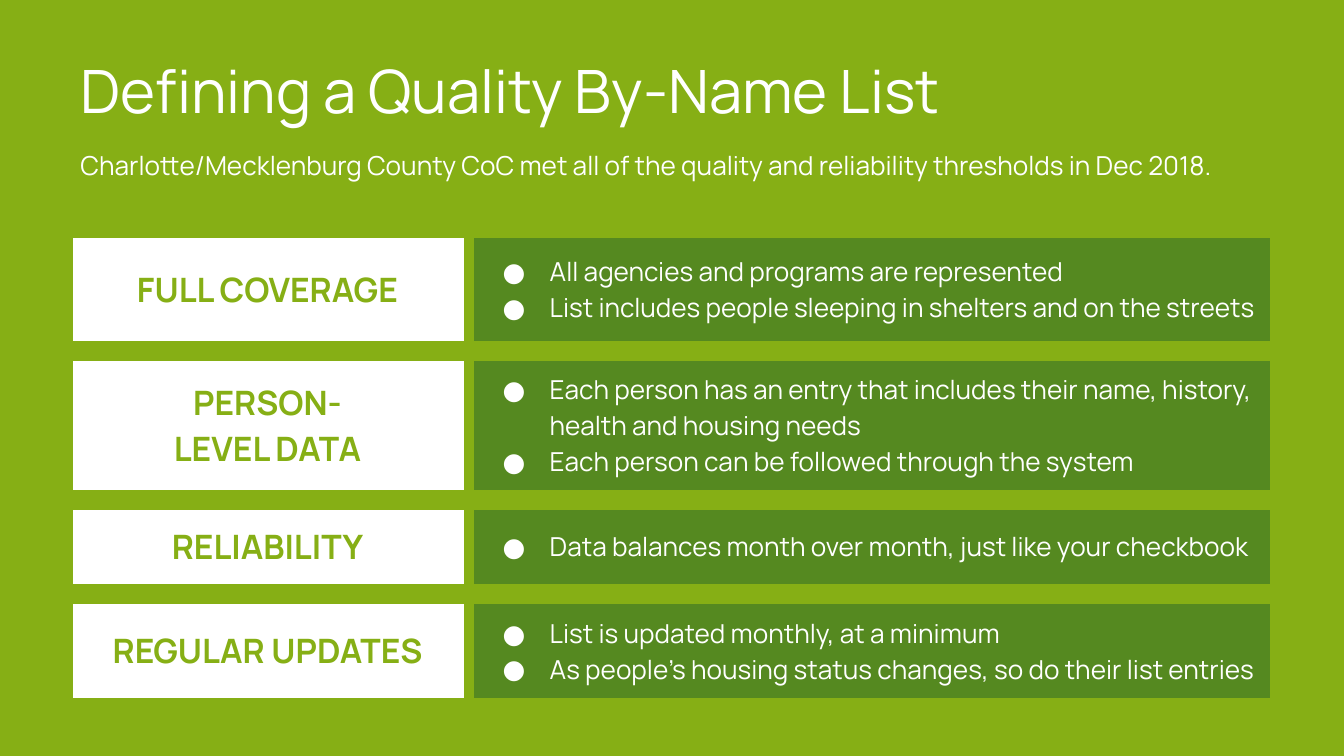
import pptx
import pptx.dml.color
import pptx.enum.text
import pptx.oxml
import pptx.oxml.ns
import pptx.util
from lxml import etree

Pt = pptx.util.Pt
FONT = "Manrope"
WHITE, LIME, GREEN = "FFFFFF", "86AF15", "558920"
INSET = 7.2
COLUMN_WIDTHS = [217.4, 434.2]

# Row height, label lines, criteria
ROWS = [
    (65.5, ["FULL COVERAGE"],
     ["All agencies and programs are represented",
      "List includes people sleeping in shelters and on the streets"]),
    (79.9, ["PERSON-", "LEVEL DATA"],
     ["Each person has an entry that includes their name, history, "
      "health and housing needs",
      "Each person can be followed through the system"]),
    (50.4, ["RELIABILITY"],
     ["Data balances month over month, just like your checkbook"]),
    (61.2, ["REGULAR UPDATES"],
     ["List is updated monthly, at a minimum",
      "As people’s housing status changes, so do their list entries"]),
]


def color(hex_code):
    return pptx.dml.color.RGBColor.from_string(hex_code)


def add_xml(parent, tag, **attributes):
    child = etree.SubElement(parent, pptx.oxml.ns.qn(tag))
    for name, value in attributes.items():
        child.set(name, str(value))
    return child


def add_span(para, text, size, hex_code, bold=False):
    span = para.add_run()
    span.text = text
    span.font.name = FONT
    span.font.size = Pt(size)
    span.font.bold = bold
    span.font.color.rgb = color(hex_code)


def set_insets(holder):
    holder.margin_left = holder.margin_right = Pt(INSET)
    holder.margin_top = holder.margin_bottom = Pt(INSET)


def add_text(page, left, top, width, height, text, size):
    box = page.shapes.add_textbox(Pt(left), Pt(top), Pt(width), Pt(height))
    frame = box.text_frame
    frame.word_wrap = True
    set_insets(frame)
    add_span(frame.paragraphs[0], text, size, WHITE)


def set_borders(cell, widths):
    properties = cell._tc.get_or_add_tcPr()
    for side, width in zip("LRTB", widths):
        line = add_xml(properties, "a:ln" + side, w=Pt(width))
        add_xml(add_xml(line, "a:solidFill"), "a:srgbClr", val=LIME)


def set_bullet(para):
    properties = para._p.get_or_add_pPr()
    properties.set("marL", str(Pt(36)))
    properties.set("indent", str(Pt(-25.2)))
    add_xml(add_xml(properties, "a:buClr"), "a:srgbClr", val=WHITE)
    add_xml(properties, "a:buFont", typeface=FONT)
    add_xml(properties, "a:buChar", char="●")


def fill_cell(cell, lines, fill, borders, size, text_color, is_label):
    set_borders(cell, borders)
    cell.fill.solid()
    cell.fill.fore_color.rgb = color(fill)
    cell.vertical_anchor = pptx.enum.text.MSO_ANCHOR.MIDDLE
    set_insets(cell)
    frame = cell.text_frame
    for index, line in enumerate(lines):
        para = frame.add_paragraph() if index else frame.paragraphs[0]
        if is_label:
            para.alignment = pptx.enum.text.PP_ALIGN.CENTER
            para._p.get_or_add_pPr().set("marL", str(Pt(1.44)))
        else:
            set_bullet(para)
        add_span(para, line, size, text_color, is_label)


def add_criteria_table(page, left, top):
    height = sum(row[0] for row in ROWS)
    table = page.shapes.add_table(
        len(ROWS), len(COLUMN_WIDTHS), Pt(left), Pt(top),
        Pt(sum(COLUMN_WIDTHS)), Pt(height)).table
    table.first_row = table.horz_banding = False
    for column, width in zip(table.columns, COLUMN_WIDTHS):
        column.width = Pt(width)
    for index, (row_height, label, criteria) in enumerate(ROWS):
        table.rows[index].height = Pt(row_height)
        fill_cell(table.cell(index, 0), label, WHITE, (12, 6, 12, 12),
                  18, LIME, True)
        fill_cell(table.cell(index, 1), criteria, GREEN, (6, 12, 12, 12),
                  14, WHITE, False)


def main():
    deck = pptx.Presentation()
    deck.slide_width, deck.slide_height = Pt(720), Pt(405)
    page = deck.slides.add_slide(deck.slide_layouts[6])
    page.background.fill.solid()
    page.background.fill.fore_color.rgb = color(LIME)

    # Table of quality criteria
    add_criteria_table(page, 33.9, 122.4)

    # Title and subtitle
    add_text(page, 36, 21.6, 659.5, 69.8,
             "Defining a Quality By-Name List", 32)
    add_text(page, 36, 72.7, 665.3, 32.4,
             "Charlotte/Mecklenburg County CoC met all of the quality and "
             "reliability thresholds in Dec 2018.", 14)

    deck.save("out.pptx")


if __name__ == "__main__":
    main()
